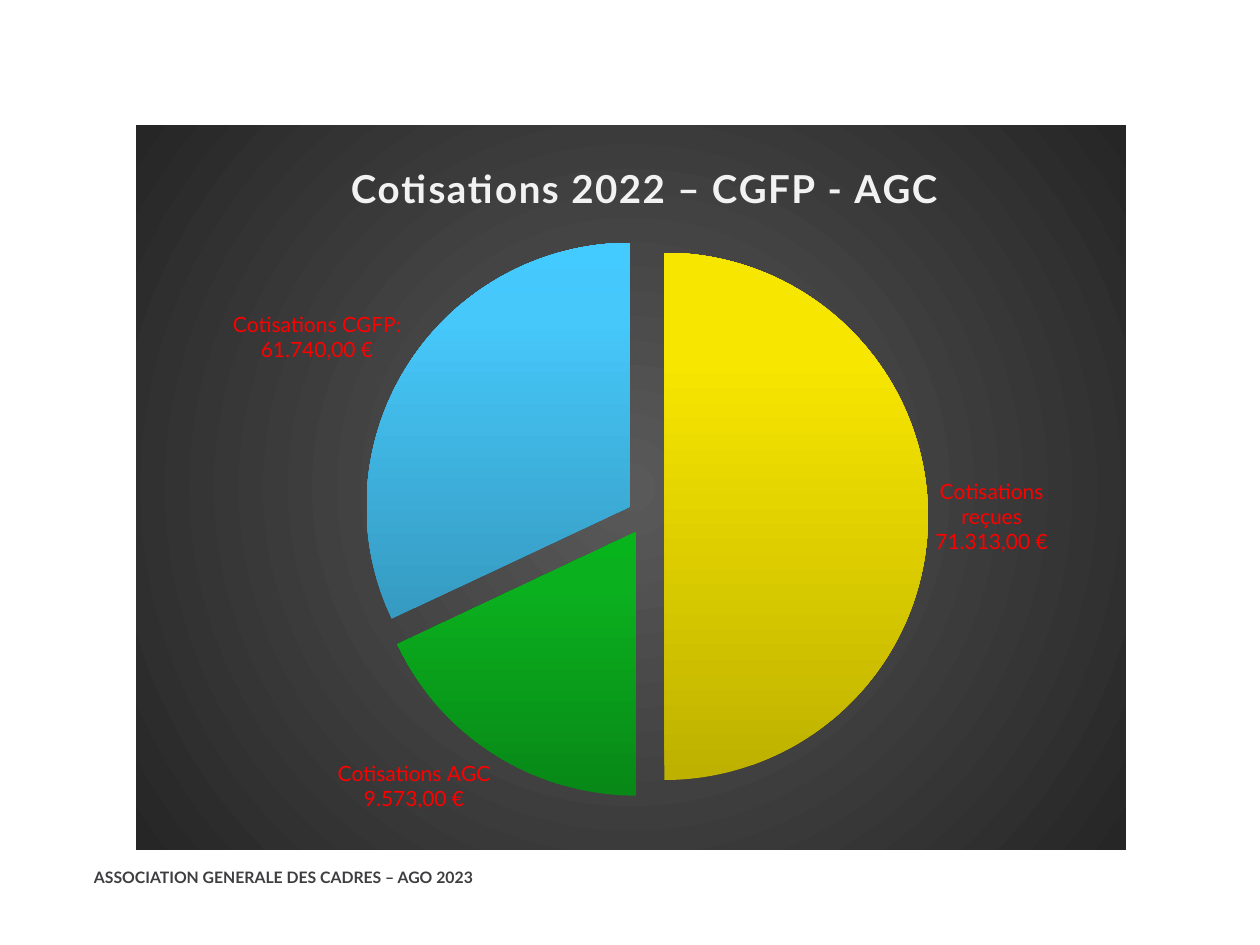
from lxml.etree import SubElement
from pptx import Presentation
from pptx.chart.data import CategoryChartData
from pptx.dml.color import RGBColor
from pptx.enum.chart import XL_CHART_TYPE, XL_LABEL_POSITION
from pptx.enum.text import MSO_ANCHOR
from pptx.oxml import parse_xml
from pptx.oxml.ns import nsdecls, qn
from pptx.util import Pt

PX = 914400 // 126
FONT = "Lato"

SLICES = [  # category, share, label, gradient stops from bottom to top
    ("Cotisations reçues", 50, "Cotisations reçues\n71.313,00 €",
     [(0, "BEB100"), (80, "F7E600"), (100, "F8E700")]),
    ("Cotisations AGC", 18, "Cotisations AGC\n9.573,00 €",
     [(0, "088817"), (80, "0BB01E"), (100, "08B41C")]),
    ("Cotisations CGFP", 32, "Cotisations CGFP:\n61.740,00 €",
     [(0, "369AC1"), (80, "46C8FA"), (100, "43CAFF")]),
]
BACKDROP = [(0, "595959"), (100, "262626")]


def rgb(value):
    return RGBColor.from_string(value)


def px(*values):
    return [v * PX for v in values]


def write(tf, text, size, color, bold=False, spacing=0):
    """Fill a text frame, one paragraph per line; spacing is in points."""
    for i, line in enumerate(text.split("\n")):
        p = tf.add_paragraph() if i else tf.paragraphs[0]
        r = p.add_run()
        r.text = line
        r.font.name, r.font.size, r.font.bold = FONT, Pt(size), bold
        r.font.color.rgb = rgb(color)
        if spacing:
            r.font._element.set("spc", str(spacing * 100))


def gradient(stops, angle=None):
    """Gradient fill element: linear at an angle, or circular without one."""
    gs = "".join(f'<a:gs pos="{pos * 1000}"><a:srgbClr val="{c}"/></a:gs>' for pos, c in stops)
    if angle is None:
        way = ('<a:path path="circle">'
               '<a:fillToRect l="50000" t="50000" r="50000" b="50000"/></a:path>')
    else:
        way = f'<a:lin ang="{angle * 60000}" scaled="0"/>'
    return parse_xml(f'<a:gradFill {nsdecls("a")}><a:gsLst>{gs}</a:gsLst>{way}</a:gradFill>')


def layout(x, y, w=None, h=None, inner=False):
    """Manual chart layout element, in fractions of the chart."""
    el = parse_xml(f'<c:layout {nsdecls("c")}><c:manualLayout/></c:layout>')
    items = [("layoutTarget", "inner" if inner else None), ("xMode", "edge"),
             ("yMode", "edge"), ("x", x), ("y", y), ("w", w), ("h", h)]
    for tag, value in items:
        if value is not None:
            SubElement(el[0], qn(f"c:{tag}")).set("val", str(value))
    return el


class Deck:
    def __init__(self):
        self.prs = Presentation()
        self.prs.slide_width, self.prs.slide_height = px(1260, 945)
        self.s = self.prs.slides.add_slide(self.prs.slide_layouts[6])

    def text(self, box, text, **fmt):
        tf = self.s.shapes.add_textbox(*px(*box)).text_frame
        tf.word_wrap = True
        tf.vertical_anchor = MSO_ANCHOR.TOP
        tf.margin_left = tf.margin_top = tf.margin_right = tf.margin_bottom = 0
        write(tf, text, **fmt)

    def pie(self, box, title, slices):
        data = CategoryChartData()
        data.categories = [name for name, *_ in slices]
        data.add_series("Series 1", [share for _, share, *_ in slices])
        chart = self.s.shapes.add_chart(XL_CHART_TYPE.PIE, *px(*box), data).chart
        chart.has_legend = False
        chart.font.name, chart.font.size = FONT, Pt(10)
        chart.font.color.rgb = rgb("000000")
        write(chart.chart_title.text_frame, title, 22, "F2F2F2", bold=True, spacing=1)
        self.place(chart)

        plot = chart.plots[0]
        plot.vary_by_categories = True
        ser = plot.series[0]
        for i, (_, _, label, stops) in enumerate(slices):
            point = ser.points[i]
            point.format.line.fill.background()
            dpt = ser._element.findall(qn("c:dPt"))[i]
            dpt.find(qn("c:spPr")).insert(0, gradient(stops, 270))
            write(point.data_label.text_frame, label, 12, "FF0000")
            point.data_label.position = XL_LABEL_POSITION.OUTSIDE_END
        ser._element.find(qn("c:tx")).addnext(
            parse_xml(f'<c:explosion {nsdecls("c")} val="7"/>'))

    def place(self, chart):
        """Set the backdrop and the places of title and plot."""
        space = chart._chartSpace
        el = space.find(qn("c:chart"))
        sppr = parse_xml(f'<c:spPr {nsdecls("c", "a")}><a:ln><a:noFill/></a:ln></c:spPr>')
        sppr.insert(0, gradient(BACKDROP))
        el.addnext(sppr)
        title, area = el.find(qn("c:title")), el.find(qn("c:plotArea"))
        for parent in (title, area):
            for old in parent.findall(qn("c:layout")):
                parent.remove(old)
        title.find(qn("c:tx")).addnext(layout(0.21, 0.04))
        area.insert(0, layout(0.23, 0.15, 0.57, 0.78, inner=True))


def main():
    deck = Deck()
    deck.text((94, 868, 745, 49), "ASSOCIATION GENERALE DES CADRES – AGO 2023",
              size=9, color="3E3D40", bold=True)
    deck.pie((136, 125, 990, 725), "Cotisations 2022 – CGFP - AGC", SLICES)
    deck.prs.save("out.pptx")


if __name__ == "__main__":
    main()
